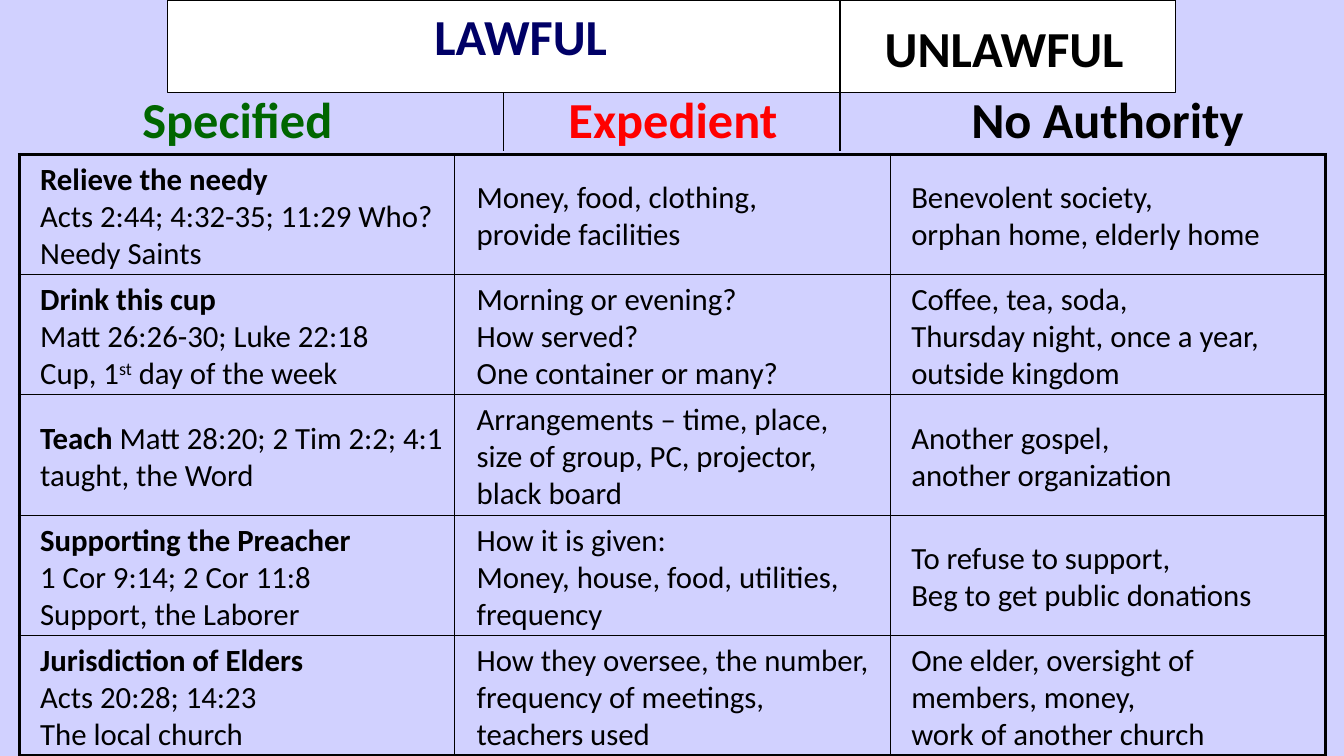
from pptx import Presentation
from pptx.dml.color import RGBColor
from pptx.enum.shapes import MSO_CONNECTOR, MSO_SHAPE
from pptx.enum.text import MSO_ANCHOR, PP_ALIGN
from pptx.oxml.ns import qn
from pptx.util import Inches, Pt
from lxml import etree

RECT, STRAIGHT = MSO_SHAPE.RECTANGLE, MSO_CONNECTOR.STRAIGHT
TOP, LEFT, CENTER = MSO_ANCHOR.TOP, PP_ALIGN.LEFT, PP_ALIGN.CENTER

THEME = {
    "font": "Calibri", "heading": 36, "body": 22,
    "background": "D1D1FF", "panel": "FFFFFF", "black": "000000",
    "lawful": "000066", "specified": "006600", "expedient": "FF0000",
    "thin": 0.75, "inner": 1, "outer": 2.25,
}
W, H = 13.33, 7.5
EIGHTH = W / 8
BANNER_H, DIVIDER_END = 0.92, 1.5
TABLE_X, TABLE_Y, COL_W = 0.19, 1.53, 4.32
TEXT_X, TEXT_W = (0.3, 4.63, 8.94), (4.21, 4.1, 4.1)
LINE_H, INSETS = 0.37, 0.1

ROWS = [
    [(3, ["*Relieve the needy*", "Acts 2:44; 4:32-35; 11:29 Who? Needy Saints"]),
     (2, ["Money, food, clothing,|provide facilities"]),
     (2, ["Benevolent society,|orphan home, elderly home"])],
    [(3, ["*Drink this cup*", "Matt 26:26-30; Luke 22:18|Cup, 1^st^ day of the week"]),
     (3, ["Morning or evening?", "How served?", "One container or many?"]),
     (3, ["Coffee, tea, soda,|Thursday night, once a year, outside kingdom"])],
    [(2, ["*Teach *Matt 28:20; 2 Tim 2:2; 4:1", "taught, the Word"]),
     (3, ["Arrangements – time, place, size of group, PC, projector, black board"]),
     (2, ["Another gospel,", "another organization"])],
    [(3, ["*Supporting the Preacher*", "1 Cor 9:14; 2 Cor 11:8|Support, the Laborer"]),
     (3, ["How it is given:", "Money, house, food, utilities, frequency"]),
     (2, ["To refuse to support,", "Beg to get public donations"])],
    [(3, ["*Jurisdiction of Elders*", "Acts 20:28; 14:23", "The local church"]),
     (3, ["How they oversee, the number, frequency of meetings,|teachers used"]),
     (3, ["One elder, oversight of members, money,", "work of another church"])],
]
ROW_H = (H - TABLE_Y) / len(ROWS)


def write(sp, box, paragraphs, size, color, align):
    for name, value in zip(("left", "top", "width", "height"), box):
        setattr(sp, name, Inches(value))
    tf = sp.text_frame
    tf.word_wrap, tf.vertical_anchor = True, TOP
    for i, text in enumerate(paragraphs):
        p = tf.add_paragraph() if i else tf.paragraphs[0]
        p.alignment = align
        for j, line in enumerate(text.split("|")):
            if j:
                p.add_line_break()
            for k, part in enumerate(line.split("*")):
                for n, piece in enumerate(part.split("^")):
                    if not piece:
                        continue
                    r = p.add_run()
                    r.text = piece
                    style = {"name": THEME["font"], "size": Pt(size), "bold": k % 2 == 1}
                    for name, value in style.items():
                        setattr(r.font, name, value)
                    r.font.color.rgb = RGBColor.from_string(THEME[color])
                    if n % 2:
                        r._r.get_or_add_rPr().set("baseline", "30000")


def set_border(cell, side, width):
    ln = etree.SubElement(cell._tc.get_or_add_tcPr(), qn(f"a:ln{side}"), w=str(Pt(width)))
    fill = etree.SubElement(ln, qn("a:solidFill"))
    etree.SubElement(fill, qn("a:srgbClr"), val=THEME["black"])


prs = Presentation()
prs.slide_width, prs.slide_height = Inches(W), Inches(H)
s = prs.slides.add_slide(prs.slide_layouts[5])
s.background.fill.solid()
s.background.fill.fore_color.rgb = RGBColor.from_string(THEME["background"])

n_rows, n_cols = len(ROWS), len(TEXT_X)
frame = s.shapes.add_table(n_rows, n_cols, Inches(TABLE_X), Inches(TABLE_Y),
                           Inches(COL_W * n_cols), Inches(ROW_H * n_rows))
table = frame.table
table.first_row = table.horz_banding = False
for col in table.columns:
    col.width = Inches(COL_W)
for y, row in enumerate(table.rows):
    row.height = Inches(ROW_H)
    for x, cell in enumerate(row.cells):
        edges = {"L": x == 0, "R": x == n_cols - 1, "T": y == 0, "B": y == n_rows - 1}
        for side, is_outer in edges.items():
            set_border(cell, side, THEME["outer" if is_outer else "inner"])
        cell.fill.background()

banner = s.shapes.add_shape(RECT, Inches(EIGHTH), 0, Inches(6 * EIGHTH), Inches(BANNER_H))
banner.shadow.inherit = False
banner.fill.solid()
banner.fill.fore_color.rgb = RGBColor.from_string(THEME["panel"])
banner.line.color.rgb = RGBColor.from_string(THEME["black"])
banner.line.width = Pt(THEME["thin"])

for eighths, y1, y2 in [(3, BANNER_H, DIVIDER_END), (5, BANNER_H, DIVIDER_END), (5, 0, BANNER_H)]:
    x = Inches(eighths * EIGHTH)
    divider = s.shapes.add_connector(STRAIGHT, x, Inches(y1), x, Inches(y2))
    divider.line.color.rgb = RGBColor.from_string(THEME["black"])
    divider.line.width = Pt(THEME["thin"])
    etree.SubElement(divider._element.spPr, qn("a:effectLst"))

title = s.shapes.title
s.shapes._spTree.append(title._element)
write(title, (2.08, 0, 6.17, 0.88), ["*LAWFUL*"], THEME["heading"], "lawful", CENTER)

HEADINGS = [
    ("*UNLAWFUL*", "black", (8.42, 0.12, 3.08, 0.71)),
    ("*Specified*", "specified", (0.19, 0.83, 4.33, 0.7)),
    ("*Expedient*", "expedient", (4.52, 0.83, 4.31, 0.7)),
    ("*No Authority*", "black", (8.83, 0.83, 4.31, 0.7)),
]
for text, color, box in HEADINGS:
    write(s.shapes.add_textbox(0, 0, 0, 0), box, [text], THEME["heading"], color, CENTER)

for y, cells in enumerate(ROWS):
    for left, width, (lines, paragraphs) in zip(TEXT_X, TEXT_W, cells):
        height = INSETS + LINE_H * lines
        top = TABLE_Y + ROW_H * y + (ROW_H - height) / 2 + 0.01
        write(s.shapes.add_textbox(0, 0, 0, 0), (left, top, width, height),
              paragraphs, THEME["body"], "black", LEFT)

prs.save("out.pptx")
